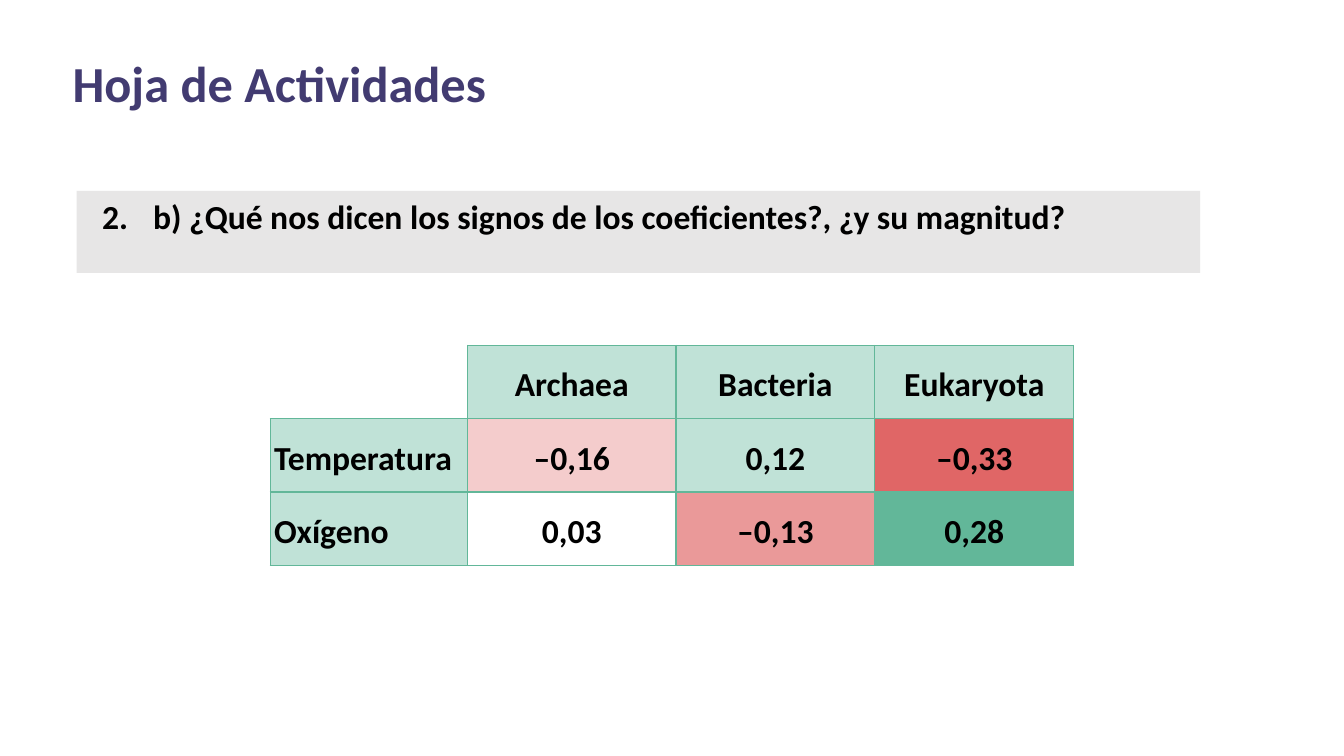
from lxml import etree
from pptx import Presentation
from pptx import util as u
from pptx.dml.color import RGBColor
from pptx.enum import shapes, text
from pptx.oxml import ns

COLORS = {
    "title": "423B71", "black": "000000", "white": "FFFFFF", "band": "E7E6E6",
    "mint": "C0E2D7", "green": "62B799",
    "pale_red": "F4CCCC", "soft_red": "EA9999", "red": "E06666",
}


def write(paragraph, words, size=18, color="black", align=text.PP_ALIGN.LEFT, line_spacing=None):
    paragraph.alignment = align
    if line_spacing:
        paragraph.line_spacing = line_spacing
    run = paragraph.add_run()
    run.text = words
    run.font.name = "Calibri"
    run.font.size = u.Pt(size)
    run.font.bold = True
    run.font.color.rgb = RGBColor.from_string(COLORS[color])


def add_border(cell, side, color):
    line = etree.SubElement(cell._tc.get_or_add_tcPr(), ns.qn(f"a:ln{side}"), w=str(u.Pt(0.75)))
    fill = etree.SubElement(line, ns.qn("a:solidFill"))
    etree.SubElement(fill, ns.qn("a:srgbClr"), val=COLORS[color])


# Widescreen slide, 16:9
presentation = Presentation()
presentation.slide_width = u.Inches(10)
presentation.slide_height = u.Inches(10) * 9 // 16
slide = presentation.slides.add_slide(presentation.slide_layouts[6])

# Title and question band
title = slide.shapes.add_textbox(u.Inches(0.47), u.Inches(0.35), u.Inches(7.87), u.Inches(0.53))
question = slide.shapes.add_shape(
    shapes.MSO_SHAPE.RECTANGLE, u.Inches(0.57), u.Inches(1.42), u.Inches(8.36), u.Inches(0.61))
question.shadow.inherit = False
question.fill.solid()
question.fill.fore_color.rgb = RGBColor.from_string(COLORS["band"])
question.line.fill.background()

for shape in (title, question):
    frame = shape.text_frame
    frame.word_wrap = True
    frame.vertical_anchor = text.MSO_ANCHOR.TOP
    frame.margin_left = frame.margin_right = u.Inches(0.07)
    frame.margin_top = frame.margin_bottom = u.Inches(0.04)

write(title.text_frame.paragraphs[0], "Hoja de Actividades", size=27, color="title")

# Numbered question, starting at 2
paragraph = question.text_frame.paragraphs[0]
properties = paragraph._p.get_or_add_pPr()
properties.set("marL", str(u.Inches(0.5)))
properties.set("indent", str(u.Inches(-0.38)))
bullet_color = etree.SubElement(properties, ns.qn("a:buClr"))
etree.SubElement(bullet_color, ns.qn("a:srgbClr"), val=COLORS["black"])
etree.SubElement(properties, ns.qn("a:buAutoNum"), type="arabicPeriod", startAt="2")
paragraph.space_after = u.Pt(10)
write(paragraph, "b) ¿Qué nos dicen los signos de los coeficientes?, ¿y su magnitud?",
      align=text.PP_ALIGN.JUSTIFY)

# Coefficient table: text and fill of each cell
rows = [
    [("", None), ("Archaea", "mint"), ("Bacteria", "mint"), ("Eukaryota", "mint")],
    [("Temperatura", "mint"), ("–0,16", "pale_red"), ("0,12", "mint"), ("–0,33", "red")],
    [("Oxígeno", "mint"), ("0,03", None), ("–0,13", "soft_red"), ("0,28", "green")],
]
column_widths = [1.47, 1.55, 1.48, 1.48]
row_height = 0.54

table = slide.shapes.add_table(
    len(rows), len(column_widths), u.Inches(2.01), u.Inches(2.57),
    u.Inches(sum(column_widths)), u.Inches(row_height * len(rows))).table
table.first_row = False
table.horz_banding = False
for column, width in zip(table.columns, column_widths):
    column.width = u.Inches(width)

for row_index, row in enumerate(rows):
    table.rows[row_index].height = u.Inches(row_height)
    for column_index, (words, fill) in enumerate(row):
        cell = table.cell(row_index, column_index)
        cell.vertical_anchor = text.MSO_ANCHOR.BOTTOM
        cell.margin_left = cell.margin_right = u.Inches(0.03)
        cell.margin_top = cell.margin_bottom = u.Inches(0.1)
        is_corner = row_index == column_index == 0
        for side in "LRTB":
            add_border(cell, side, "white" if is_corner and side in "LT" else "green")
        if fill:
            cell.fill.solid()
            cell.fill.fore_color.rgb = RGBColor.from_string(COLORS[fill])
        else:
            cell.fill.background()
        if words:
            write(cell.text_frame.paragraphs[0], words, line_spacing=1.15,
                  align=text.PP_ALIGN.CENTER if column_index else text.PP_ALIGN.LEFT)

presentation.save("out.pptx")
